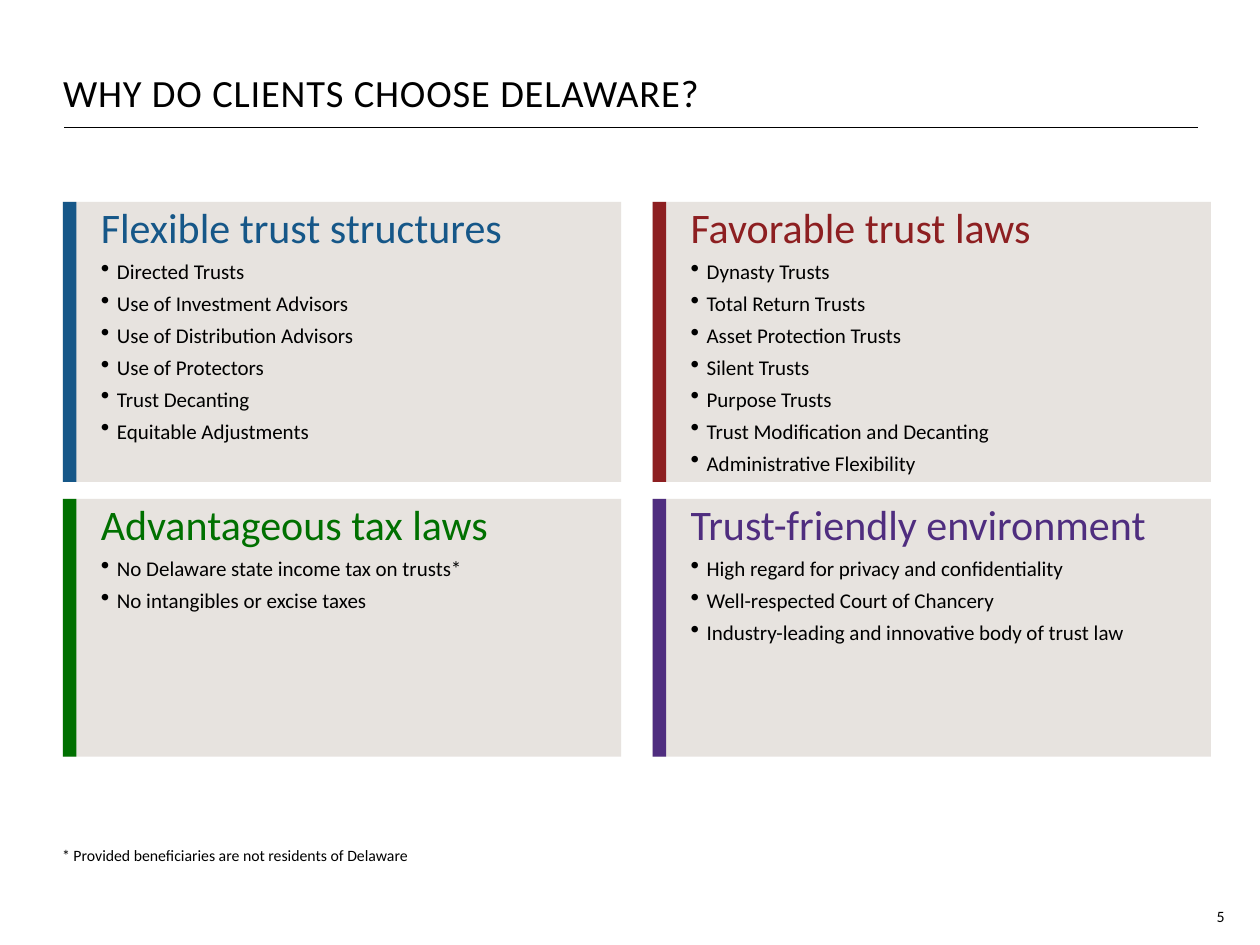
import pptx
import pptx.util
import pptx.dml.color
import pptx.enum.shapes
import pptx.enum.text
import pptx.oxml.ns
import lxml.etree

Pt = pptx.util.Pt
RGBColor = pptx.dml.color.RGBColor
qn = pptx.oxml.ns.qn
Anchor = pptx.enum.text.MSO_ANCHOR
Align = pptx.enum.text.PP_ALIGN
RECTANGLE = pptx.enum.shapes.MSO_SHAPE.RECTANGLE

BLACK = RGBColor(0x00, 0x00, 0x00)
PANEL = RGBColor(0xE7, 0xE3, 0xDF)
BLUE = RGBColor(0x16, 0x57, 0x88)
RED = RGBColor(0x8D, 0x1F, 0x21)
GREEN = RGBColor(0x00, 0x70, 0x00)
PURPLE = RGBColor(0x4F, 0x2D, 0x7F)


def set_frame(shape, anchor, side_margin=0):
    frame = shape.text_frame
    frame.word_wrap = True
    frame.auto_size = pptx.enum.text.MSO_AUTO_SIZE.NONE
    frame.vertical_anchor = anchor
    frame.margin_left = frame.margin_right = Pt(side_margin)
    frame.margin_top = frame.margin_bottom = Pt(0)
    return frame


def add_run(paragraph, text, size, color, align=Align.LEFT):
    paragraph.alignment = align
    run = paragraph.add_run()
    run.text = text
    run.font.name = "Calibri"
    run.font.size = Pt(size)
    run.font.color.rgb = color
    return run


presentation = pptx.Presentation()
presentation.slide_width = Pt(720)
presentation.slide_height = Pt(540)
slide = presentation.slides.add_slide(presentation.slide_layouts[5])

title = slide.shapes.title
title.left, title.top, title.width, title.height = Pt(36), Pt(41), Pt(504), Pt(25.2)
paragraph = set_frame(title, Anchor.BOTTOM).paragraphs[0]
paragraph.line_spacing = 0.95
run = add_run(paragraph, "WHY DO CLIENTS CHOOSE DELAWARE?", 22, BLACK)
run.font._element.set("spc", "50")

rule = slide.shapes.add_connector(
    pptx.enum.shapes.MSO_CONNECTOR.STRAIGHT, Pt(36.6), Pt(73), Pt(684.6), Pt(73))
rule.line.color.rgb = BLACK
rule.line.width = Pt(0.5)
lxml.etree.SubElement(rule._element.spPr, qn("a:effectLst"))

column_lefts = [36, 373]
rows = [(115.4, 160), (285.1, 147.3)]
panels = [
    ("Flexible trust structures", BLUE,
     ["Directed Trusts", "Use of Investment Advisors", "Use of Distribution Advisors",
      "Use of Protectors", "Trust Decanting", "Equitable Adjustments"]),
    ("Favorable trust laws", RED,
     ["Dynasty Trusts", "Total Return Trusts", "Asset Protection Trusts", "Silent Trusts",
      "Purpose Trusts", "Trust Modification and Decanting", "Administrative Flexibility"]),
    ("Advantageous tax laws", GREEN,
     ["No Delaware state income tax on trusts*", "No intangibles or excise taxes"]),
    ("Trust-friendly environment", PURPLE,
     ["High regard for privacy and confidentiality", "Well-respected Court of Chancery",
      "Industry-leading and innovative body of trust law"]),
]

for index, (heading, accent, points) in enumerate(panels):
    left = column_lefts[index % 2]
    top, height = rows[index // 2]
    for width, color in [(319, PANEL), (7.7, accent)]:
        shape = slide.shapes.add_shape(RECTANGLE, Pt(left), Pt(top), Pt(width), Pt(height))
        shape.shadow.inherit = False
        shape.fill.solid()
        shape.fill.fore_color.rgb = color
        shape.line.fill.background()
        if color == PANEL:
            frame = set_frame(shape, Anchor.TOP, 21.6)
    add_run(frame.paragraphs[0], heading, 24, accent)
    for point in points:
        paragraph = frame.add_paragraph()
        paragraph.level = 1
        paragraph.space_before = Pt(3.8)
        properties = paragraph._p.get_or_add_pPr()
        properties.set("marL", str(Pt(9.2)))
        properties.set("indent", str(-Pt(9.2)))
        lxml.etree.SubElement(properties, qn("a:buSzPct")).set("val", "120000")
        lxml.etree.SubElement(properties, qn("a:buChar")).set("char", "•")
        add_run(paragraph, point, 12, BLACK)

footnote = slide.shapes.add_textbox(Pt(31), Pt(458), Pt(335.5), Pt(36))
paragraph = set_frame(footnote, Anchor.BOTTOM).paragraphs[0]
paragraph.line_spacing = 0.9
paragraph._p.get_or_add_pPr().set("marL", str(Pt(4.5)))
add_run(paragraph, "* Provided beneficiaries are not residents of Delaware", 9, BLACK)

page_number = slide.shapes.add_textbox(Pt(671.8), Pt(511.2), Pt(28), Pt(18))
paragraph = set_frame(page_number, Anchor.BOTTOM).paragraphs[0]
add_run(paragraph, "5", 9, BLACK, Align.RIGHT)

presentation.save("out.pptx")
